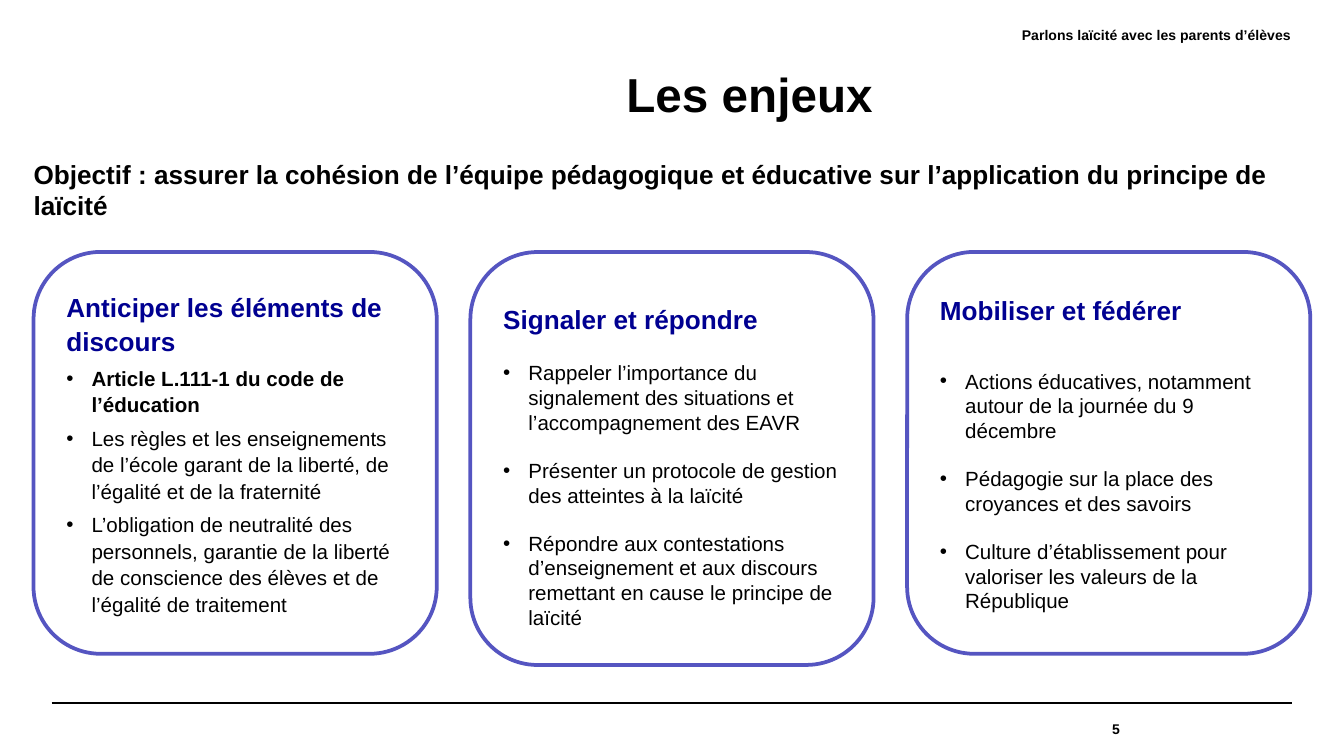
from lxml import etree
from pptx import Presentation
from pptx.dml.color import RGBColor
from pptx.enum.shapes import MSO_CONNECTOR, MSO_SHAPE
from pptx.enum.text import MSO_ANCHOR, PP_ALIGN
from pptx.oxml.ns import qn
from pptx.util import Emu, Pt

LEFT, CENTER, RIGHT = PP_ALIGN.LEFT, PP_ALIGN.CENTER, PP_ALIGN.RIGHT
TOP, MIDDLE = MSO_ANCHOR.TOP, MSO_ANCHOR.MIDDLE
STRAIGHT = MSO_CONNECTOR.STRAIGHT
ROUNDED = MSO_SHAPE.ROUNDED_RECTANGLE

BLACK = RGBColor(0x00, 0x00, 0x00)
WHITE = RGBColor(0xFF, 0xFF, 0xFF)
NAVY = RGBColor(0x00, 0x00, 0x91)
VIOLET = RGBColor(0x55, 0x55, 0xC1)

CARD_LEFT, CARD_TOP, CARD_WIDTH, CARD_GAP = 24, 180, 288, 24

CARDS = [
    {
        "height": 287,
        "heading": "Anticiper les éléments de discours",
        "heading_spacing": 1.07, "heading_after": 4,
        "spacing": 1.07, "after": 4, "last_after": 4,
        "points": [
            ("Article L.111-1 du code de l’éducation", True),
            ("Les règles et les enseignements de l’école garant de la liberté, "
             "de l’égalité et de la fraternité", False),
            ("L’obligation de neutralité des personnels, garantie de la liberté "
             "de conscience des élèves et de l’égalité de traitement", False),
        ],
    },
    {
        "height": 295,
        "heading": "Signaler et répondre",
        "heading_spacing": 1.5, "heading_after": 13.8,
        "spacing": 1.0, "after": 12.65, "last_after": 0,
        "points": [
            ("Rappeler l’importance du signalement des situations et "
             "l’accompagnement des EAVR", False),
            ("Présenter un protocole de gestion des atteintes à la laïcité", False),
            ("Répondre aux contestations d’enseignement et aux discours "
             "remettant en cause le principe de laïcité", False),
        ],
    },
    {
        "height": 287,
        "heading": "Mobiliser et fédérer",
        "heading_spacing": 1.07, "heading_after": 22.7,
        "spacing": 1.0, "after": 12.65, "last_after": 0,
        "points": [
            ("Actions éducatives, notamment autour de la journée du 9 décembre", False),
            ("Pédagogie sur la place des croyances et des savoirs", False),
            ("Culture d’établissement pour valoriser les valeurs de la République", False),
        ],
    },
]


def px(n):
    return Emu(n * 9525)


class Deck:
    font = "Arial"
    indent = 18

    def __init__(self, width, height):
        self.prs = Presentation()
        self.prs.slide_width, self.prs.slide_height = px(width), px(height)
        self.s = self.prs.slides.add_slide(self.prs.slide_layouts[6])

    def run(self, p, text, size, color=BLACK, bold=True):
        r = p.add_run()
        r.text = text
        r.font.name, r.font.size, r.font.bold = self.font, Pt(size), bold
        r.font.color.rgb = color

    def text(self, x, y, w, h, text, size, align=LEFT, anchor=TOP, spacing=1.0):
        tf = self.s.shapes.add_textbox(px(x), px(y), px(w), px(h)).text_frame
        tf.word_wrap = True
        tf.vertical_anchor = anchor
        tf.margin_left = tf.margin_top = tf.margin_right = tf.margin_bottom = 0
        p = tf.paragraphs[0]
        p.alignment, p.line_spacing = align, spacing
        self.run(p, text, size)

    def rule(self, x1, x2, y):
        line = self.s.shapes.add_connector(STRAIGHT, px(x1), px(y), px(x2), px(y))
        line.line.color.rgb, line.line.width = BLACK, Pt(0.8)
        etree.SubElement(line._element.spPr, qn("a:effectLst"))

    def bullet(self, p):
        pPr = p._p.get_or_add_pPr()
        pPr.set("marL", str(px(self.indent)))
        pPr.set("indent", str(-px(self.indent)))
        etree.SubElement(pPr, qn("a:buFont")).set("typeface", self.font)
        etree.SubElement(pPr, qn("a:buChar")).set("char", "•")

    def card(self, x, y, w, card):
        sp = self.s.shapes.add_shape(ROUNDED, px(x), px(y), px(w), px(card["height"]))
        sp.shadow.inherit = False
        sp.fill.solid()
        sp.fill.fore_color.rgb = WHITE
        sp.line.color.rgb, sp.line.width = VIOLET, Pt(2)
        tf = sp.text_frame
        tf.word_wrap, tf.vertical_anchor = True, MIDDLE
        p = tf.paragraphs[0]
        p.alignment, p.line_spacing = LEFT, card["heading_spacing"]
        p.space_after = Pt(card["heading_after"])
        self.run(p, card["heading"], 14, NAVY)
        for text, bold in card["points"]:
            p = tf.add_paragraph()
            self.bullet(p)
            p.alignment, p.line_spacing = LEFT, card["spacing"]
            p.space_after = Pt(card["after"])
            self.run(p, text, 11, bold=bold)
        p.space_after = Pt(card["last_after"])


def main():
    deck = Deck(960, 540)
    deck.rule(37, 923, 502)
    deck.text(658, 502, 142, 37, "5", 7.5, RIGHT, MIDDLE)
    deck.text(348, 19, 574, 14, "Parlons laïcité avec les parents d’élèves", 7.5, RIGHT)
    deck.text(148, 51, 775, 49, "Les enjeux", 25.5, CENTER, spacing=0.9)
    for i, card in enumerate(CARDS):
        deck.card(CARD_LEFT + i * (CARD_WIDTH + CARD_GAP), CARD_TOP, CARD_WIDTH, card)
    deck.text(24, 113, 912, 49,
              "Objectif : assurer la cohésion de l’équipe pédagogique et éducative "
              "sur l’application du principe de laïcité", 14)
    deck.prs.save("out.pptx")


if __name__ == "__main__":
    main()
